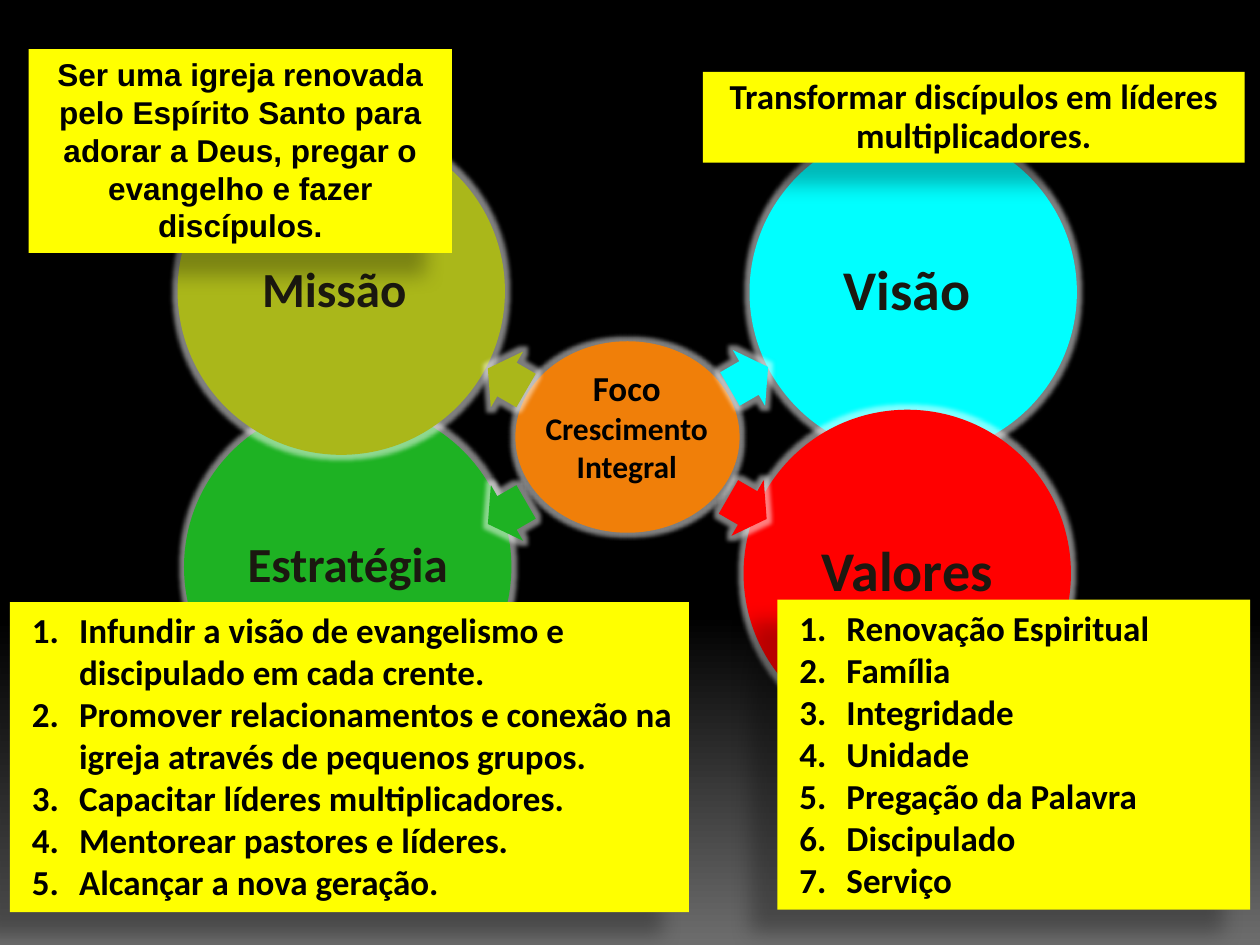
from lxml import etree
from pptx import Presentation
from pptx.dml.color import RGBColor
from pptx.enum.shapes import MSO_SHAPE
from pptx.enum.text import MSO_ANCHOR, MSO_AUTO_SIZE, PP_ALIGN
from pptx.oxml import parse_xml
from pptx.oxml.ns import qn
from pptx.util import Cm, Pt

OVAL, RECTANGLE, ARROW = MSO_SHAPE.OVAL, MSO_SHAPE.RECTANGLE, MSO_SHAPE.RIGHT_ARROW
TOP, MIDDLE = MSO_ANCHOR.TOP, MSO_ANCHOR.MIDDLE
LEFT, CENTER = PP_ALIGN.LEFT, PP_ALIGN.CENTER
NO_AUTOFIT = MSO_AUTO_SIZE.NONE
TWO_CONTENT_LAYOUT = 3

BLACK, GREY, YELLOW, INK = "000000", "6D6D6D", "FFFF00", "1B1810"
OLIVE, CYAN, GREEN, RED, ORANGE = "AAB71A", "00FFFF", "1EB223", "FF0000", "F07F09"

CIRCLE_SIZE = 6.6
ARROW_LENGTH, ARROW_WIDTH = 0.89, 1.3
DRAWING_NS = "http://schemas.openxmlformats.org/drawingml/2006/main"
GLOW = (f'<a:glow xmlns:a="{DRAWING_NS}" rad="63500"><a:srgbClr val="FFFFFF">'
        '<a:alpha val="50000"/></a:srgbClr></a:glow>')
SHADOW = (f'<a:outerShdw xmlns:a="{DRAWING_NS}" blurRad="149987" dist="250190" '
          'dir="8460000" algn="ctr"><a:srgbClr val="000000"><a:alpha val="28000"/>'
          '</a:srgbClr></a:outerShdw>')

# name, left, top, fill, text size, shift of the name to the left
CIRCLES = [
    ("Visão ", 15.11, 2.59, CYAN, 32, 0),
    ("Valores", 14.99, 8.26, RED, 32, 0),
    ("Estratégia", 3.71, 8.13, GREEN, 28, 0),
    ("Missão", 3.58, 2.57, OLIVE, 28, 0.14),
]
# centre x, centre y, rotation, fill
ARROWS = [
    (15.1, 7.62, 330, CYAN),
    (15.07, 10.24, 30, RED),
    (10.22, 7.65, 210, OLIVE),
    (10.22, 10.34, 150, GREEN),
]
MISSION = ("Ser uma igreja renovada pelo Espírito Santo para adorar a Deus, "
           "pregar o evangelho e fazer discípulos.")
VISION = "Transformar discípulos em líderes multiplicadores."
STRATEGY = [
    "Infundir a visão de evangelismo e discipulado em cada crente.",
    "Promover relacionamentos e conexão na igreja através de pequenos grupos.",
    "Capacitar líderes multiplicadores.",
    "Mentorear pastores e líderes.",
    "Alcançar a nova geração.",
]
VALUES = ["Renovação Espiritual", "Família", "Integridade", "Unidade",
          "Pregação da Palavra", "Discipulado", "Serviço"]


def rgb(color):
    return RGBColor.from_string(color)


def paint(shape, color, effect):
    shape.fill.solid()
    shape.fill.fore_color.rgb = rgb(color)
    shape.line.fill.background()
    shape.shadow.inherit = False
    effects = shape.element.spPr.find(qn("a:effectLst"))
    effects.append(parse_xml(effect))


def style(paragraph, size, color=BLACK, font="Calibri", align=CENTER, spacing=1.0):
    paragraph.alignment = align
    paragraph.line_spacing = spacing
    paragraph.space_before = Pt(0)
    paragraph.font.name = font
    paragraph.font.size = Pt(size)
    paragraph.font.bold = True
    paragraph.font.color.rgb = rgb(color)


def prepare_frame(shape, anchor, margin=None):
    frame = shape.text_frame
    frame.word_wrap = True
    frame.auto_size = NO_AUTOFIT
    frame.vertical_anchor = anchor
    if margin is not None:
        frame.margin_left = frame.margin_right = Cm(margin)
        frame.margin_top = frame.margin_bottom = Cm(margin)
    return frame


def place_on_top(placeholder, left, top, width, height):
    placeholder.left, placeholder.top = Cm(left), Cm(top)
    placeholder.width, placeholder.height = Cm(width), Cm(height)
    placeholder.element.getparent().append(placeholder.element)


def number(paragraph):
    properties = paragraph._p.get_or_add_pPr()
    properties.set("marL", str(Cm(1.14)))
    properties.set("indent", str(Cm(-0.95)))
    numbering = etree.SubElement(properties, qn("a:buAutoNum"))
    numbering.set("type", "arabicPeriod")


def add_background(slide):
    fill = slide.background.fill
    fill.gradient()
    fill.gradient_angle = 270
    for stop, position, color in zip(fill.gradient_stops, (0.65, 1), (BLACK, GREY)):
        stop.position = position
        stop.color.rgb = rgb(color)


def add_oval(slide, left, top, width, height, color):
    oval = slide.shapes.add_shape(OVAL, Cm(left), Cm(top), Cm(width), Cm(height))
    paint(oval, color, GLOW)
    return oval


def add_circle(slide, name, left, top, color, size, shift):
    circle = add_oval(slide, left, top, CIRCLE_SIZE, CIRCLE_SIZE, color)
    frame = prepare_frame(circle, MIDDLE, 0.05)
    frame.margin_right += Cm(2 * shift)
    frame.text = name
    style(frame.paragraphs[0], size, INK, spacing=0.9)


def add_focus(slide):
    add_oval(slide, 10.39, 6.88, 4.52, 3.86, ORANGE)
    title = slide.shapes.title
    place_on_top(title, 10.87, 6.93, 3.53, 3.3)
    frame = prepare_frame(title, MIDDLE, 0.08)
    frame.text = "Foco\nCrescimento Integral"
    for paragraph, size in zip(frame.paragraphs, (20, 18)):
        style(paragraph, size)


def add_statement(slide, text, left, top, width, height, **text_style):
    box = slide.shapes.add_shape(RECTANGLE, Cm(left), Cm(top), Cm(width), Cm(height))
    paint(box, YELLOW, SHADOW)
    frame = prepare_frame(box, TOP)
    frame.text = text
    style(frame.paragraphs[0], **text_style)


def fill_list(placeholder, items, left, top, width, height):
    place_on_top(placeholder, left, top, width, height)
    paint(placeholder, YELLOW, SHADOW)
    frame = prepare_frame(placeholder, TOP)
    frame.text = "\n".join(items)
    for paragraph in frame.paragraphs:
        paragraph.space_before = Pt(0)
        paragraph.line_spacing = 1.0
        number(paragraph)
        style(paragraph, 20, align=LEFT)


def add_arrow(slide, center_x, center_y, rotation, color):
    arrow = slide.shapes.add_shape(
        ARROW, Cm(center_x - ARROW_LENGTH / 2), Cm(center_y - ARROW_WIDTH / 2),
        Cm(ARROW_LENGTH), Cm(ARROW_WIDTH))
    arrow.rotation = rotation
    arrow.adjustments[0] = 0.6
    paint(arrow, color, GLOW)


def main():
    presentation = Presentation()
    presentation.slide_width, presentation.slide_height = Cm(25.4), Cm(19.05)
    slide = presentation.slides.add_slide(presentation.slide_layouts[TWO_CONTENT_LAYOUT])
    strategy_list, values_list = slide.placeholders[1], slide.placeholders[2]

    add_background(slide)
    add_focus(slide)
    for circle in CIRCLES:
        add_circle(slide, *circle)
    add_statement(slide, MISSION, 0.58, 0.99, 8.53, 4.11, size=18, font="Arial")
    fill_list(strategy_list, STRATEGY, 0.2, 12.14, 13.69, 6.25)
    fill_list(values_list, VALUES, 15.67, 12.09, 9.53, 6.25)
    add_statement(slide, VISION, 14.17, 1.45, 10.92, 1.83, size=20, spacing=Pt(22))
    for arrow in ARROWS:
        add_arrow(slide, *arrow)
    presentation.save("out.pptx")


if __name__ == "__main__":
    main()
